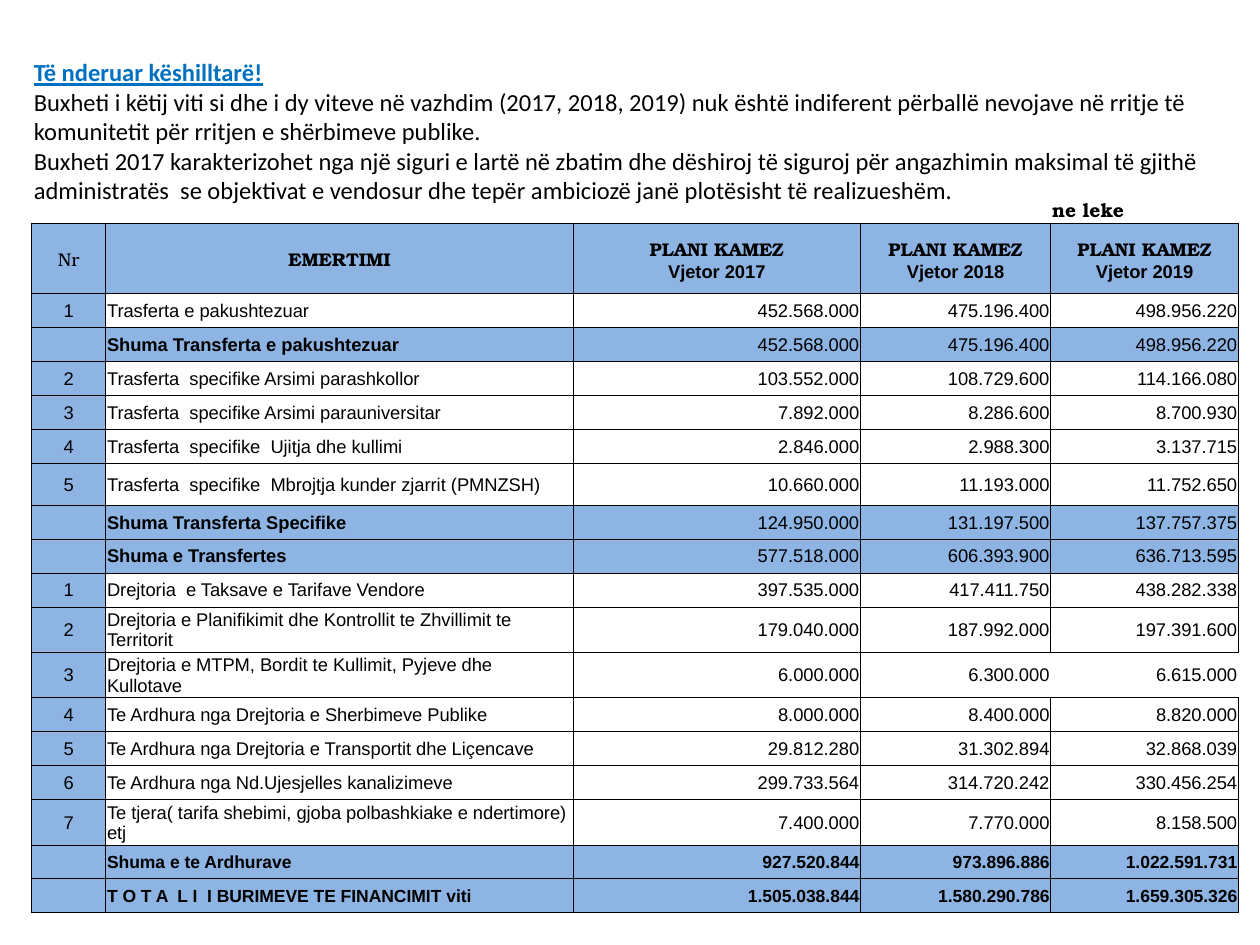
from lxml.etree import SubElement
from pptx import Presentation
from pptx.dml.color import RGBColor
from pptx.enum.text import MSO_ANCHOR, PP_ALIGN
from pptx.oxml.ns import qn
from pptx.util import Inches, Pt

BLACK = RGBColor(0x00, 0x00, 0x00)
WHITE = RGBColor(0xFF, 0xFF, 0xFF)
HEADING_BLUE = RGBColor(0x00, 0x70, 0xC0)
BAND_BLUE = RGBColor(0x8D, 0xB4, 0xE3)
SERIF, SANS = "TeX Gyre Bonum", "Arial"

# Content
HEADING = "Të nderuar këshilltarë!"
BODY = [
    "Buxheti i këtij viti si dhe i dy viteve në vazhdim (2017, 2018, 2019) nuk është "
    "indiferent përballë nevojave në rritje të komunitetit për rritjen e shërbimeve publike.",
    "Buxheti 2017 karakterizohet nga një siguri e lartë në zbatim dhe dëshiroj të siguroj "
    "për angazhimin maksimal të gjithë administratës  se objektivat e vendosur dhe tepër "
    "ambiciozë janë plotësisht të realizueshëm.",
]
UNIT = "ne leke"
YEARS = [2017, 2018, 2019]
# Number, description, one amount per year; rows without a number are sums
ROWS = [
    ("1", "Trasferta e pakushtezuar", "452.568.000", "475.196.400", "498.956.220"),
    ("", "Shuma Transferta e pakushtezuar", "452.568.000", "475.196.400", "498.956.220"),
    ("2", "Trasferta  specifike Arsimi parashkollor", "103.552.000", "108.729.600", "114.166.080"),
    ("3", "Trasferta  specifike Arsimi parauniversitar", "7.892.000", "8.286.600", "8.700.930"),
    ("4", "Trasferta  specifike  Ujitja dhe kullimi", "2.846.000", "2.988.300", "3.137.715"),
    ("5", "Trasferta  specifike  Mbrojtja kunder zjarrit (PMNZSH)",
     "10.660.000", "11.193.000", "11.752.650"),
    ("", "Shuma Transferta Specifike", "124.950.000", "131.197.500", "137.757.375"),
    ("", "Shuma e Transfertes", "577.518.000", "606.393.900", "636.713.595"),
    ("1", "Drejtoria  e Taksave e Tarifave Vendore", "397.535.000", "417.411.750", "438.282.338"),
    ("2", "Drejtoria e Planifikimit dhe Kontrollit te Zhvillimit te Territorit",
     "179.040.000", "187.992.000", "197.391.600"),
    ("3", "Drejtoria e MTPM, Bordit te Kullimit, Pyjeve dhe Kullotave",
     "6.000.000", "6.300.000", "6.615.000"),
    ("4", "Te Ardhura nga Drejtoria e Sherbimeve Publike", "8.000.000", "8.400.000", "8.820.000"),
    ("5", "Te Ardhura nga Drejtoria e Transportit dhe Liçencave",
     "29.812.280", "31.302.894", "32.868.039"),
    ("6", "Te Ardhura nga Nd.Ujesjelles kanalizimeve",
     "299.733.564", "314.720.242", "330.456.254"),
    ("7", "Te tjera( tarifa shebimi, gjoba polbashkiake e ndertimore) etj",
     "7.400.000", "7.770.000", "8.158.500"),
    ("", "Shuma e te Ardhurave", "927.520.844", "973.896.886", "1.022.591.731"),
    ("", "T O T A  L I  I BURIMEVE TE FINANCIMIT viti",
     "1.505.038.844", "1.580.290.786", "1.659.305.326"),
]
COL_WIDTHS = [0.59, 3.71, 2.28, 1.51, 1.49]
ROW_HEIGHT, HEADER_HEIGHT = 0.27, 0.56
TALL_ROWS = {5: 0.33, 9: 0.36, 10: 0.36, 14: 0.36}
OPEN_SIDES = {(10, 3): "LTB", (10, 4): "TB"}  # cells lacking some side borders
FIRST_GRAND_TOTAL = len(ROWS) - 2
ALIGNMENTS = [PP_ALIGN.CENTER, PP_ALIGN.LEFT] + [PP_ALIGN.RIGHT] * len(YEARS)


def style(p, font, size, bold=False, color=BLACK, align=PP_ALIGN.LEFT):
    p.alignment = align
    p.font.name, p.font.size, p.font.bold = font, Pt(size), bold
    p.font.color.rgb = color


def format_cell(cell, fill=None, sides="LRTB", anchor=MSO_ANCHOR.MIDDLE):
    cell.margin_left = cell.margin_right = cell.margin_top = Inches(0.01)
    cell.margin_bottom = 0
    cell.vertical_anchor = anchor
    tcPr = cell._tc.get_or_add_tcPr()
    for side in "LRTB":
        ln = SubElement(tcPr, qn(f"a:ln{side}"), w=str(Pt(0.5)))
        if side in sides:
            SubElement(SubElement(ln, qn("a:solidFill")), qn("a:srgbClr"), val=str(BLACK))
        else:
            SubElement(ln, qn("a:noFill"))
    if fill is None:
        cell.fill.background()
    else:
        cell.fill.solid()
        cell.fill.fore_color.rgb = fill


def write_cell(cell, lines, align=PP_ALIGN.LEFT):
    """Fill a cell with (text, font, size, bold) lines."""
    tf = cell.text_frame
    tf.text = "\n".join(line[0] for line in lines)
    for p, (text, font, size, bold) in zip(tf.paragraphs, lines):
        style(p, font, size, bold, align=align)
        if not text:  # keeps an empty cell from stretching its row
            SubElement(p._p, qn("a:endParaRPr"), sz=str(int(size * 100)))


prs = Presentation()
prs.slide_width, prs.slide_height = Inches(10), Inches(7.5)
s = prs.slides.add_slide(prs.slide_layouts[6])

# Introduction
tf = s.shapes.add_textbox(Inches(0.17), Inches(0.4), Inches(9.67), Inches(1.28)).text_frame
tf.word_wrap = True
tf.vertical_anchor = MSO_ANCHOR.MIDDLE
tf.text = "\n".join([HEADING] + BODY)
for p in tf.paragraphs:
    style(p, "Calibri", 14)
heading = tf.paragraphs[0]
style(heading, "Calibri", 14, True, HEADING_BLUE)
heading.font.underline = True

# Table grid: unit row, header row, then the budget rows
heights = [ROW_HEIGHT, HEADER_HEIGHT] + [TALL_ROWS.get(i, ROW_HEIGHT) for i in range(len(ROWS))]
table = s.shapes.add_table(len(heights), len(COL_WIDTHS), Inches(0.25), Inches(1.5),
                           Inches(sum(COL_WIDTHS)), Inches(sum(heights))).table
table.first_row = table.horz_banding = False
for column, width in zip(table.columns, COL_WIDTHS):
    column.width = Inches(width)
for row, height in zip(table.rows, heights):
    row.height = Inches(height)

# Unit row
for c in range(len(COL_WIDTHS)):
    cell = table.cell(0, c)
    format_cell(cell, sides="B", anchor=MSO_ANCHOR.BOTTOM)
    write_cell(cell, [(UNIT if c == len(COL_WIDTHS) - 1 else "", SERIF, 11, True)])

# Header row
headers = [[("Nr", SERIF, 10.5, False)], [("EMERTIMI", SERIF, 10.5, True)]]
headers += [[("PLANI KAMEZ", SERIF, 10.5, True), (f"Vjetor {year}", SANS, 10.5, True)]
            for year in YEARS]
for c, lines in enumerate(headers):
    format_cell(table.cell(1, c), BAND_BLUE)
    write_cell(table.cell(1, c), lines, PP_ALIGN.CENTER)

# Budget rows
for i, values in enumerate(ROWS):
    is_sum = not values[0]
    is_grand = i >= FIRST_GRAND_TOTAL
    for c, (text, align) in enumerate(zip(values, ALIGNMENTS)):
        cell = table.cell(i + 2, c)
        if is_sum or c == 0:
            fill = BAND_BLUE
        else:
            fill = None if c == 1 or (i, c) in OPEN_SIDES else WHITE
        format_cell(cell, fill, OPEN_SIDES.get((i, c), "LRTB"))
        bold = is_grand or (is_sum and c == 1)
        write_cell(cell, [(text, SANS, 10 if is_grand else 10.5, bold)], align)

prs.save("out.pptx")
